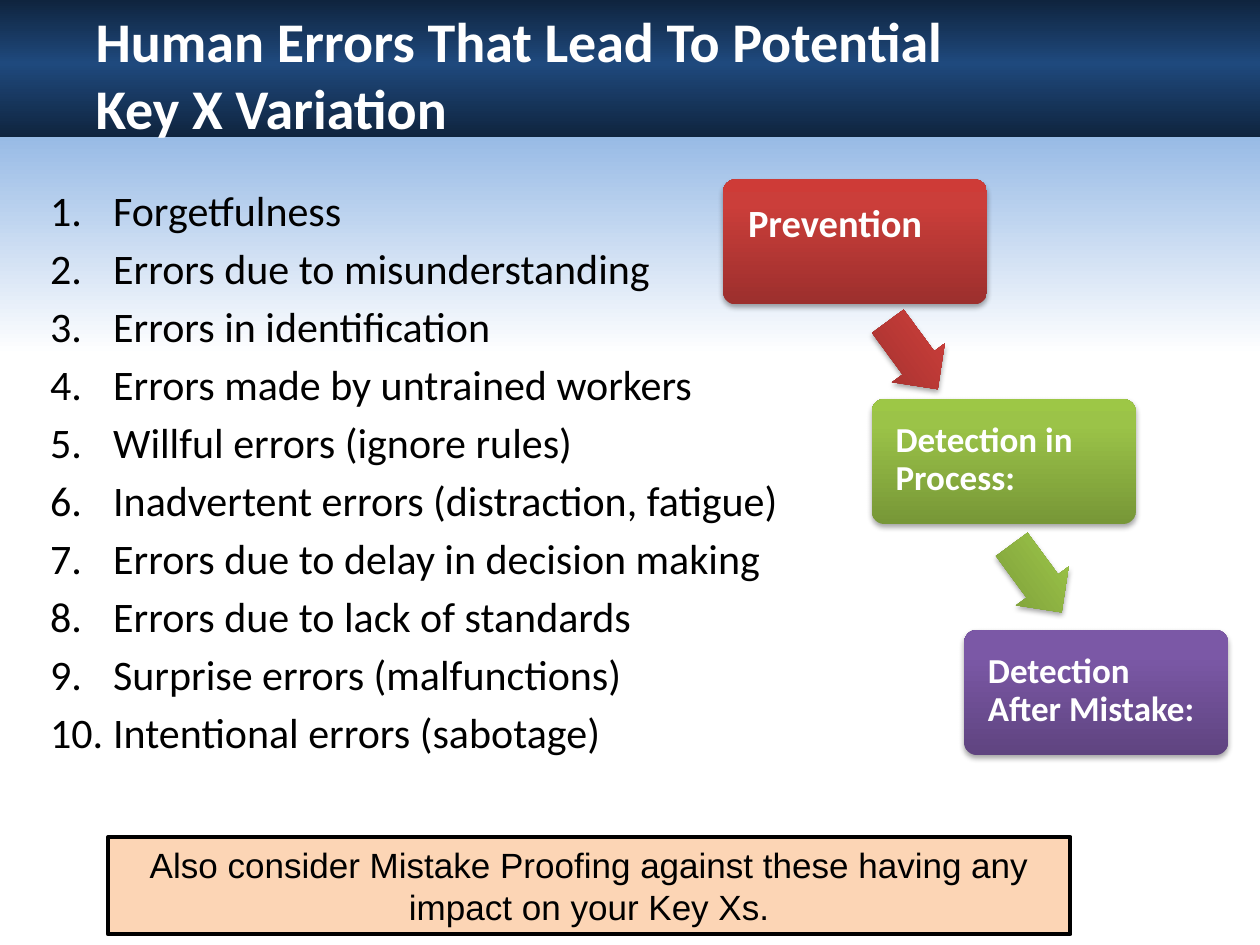
import lxml.etree
import pptx
import pptx.dml.color
import pptx.enum.shapes
import pptx.enum.text
import pptx.oxml
import pptx.oxml.ns
import pptx.util

Pt = pptx.util.Pt
Color = pptx.dml.color.RGBColor.from_string
qn = pptx.oxml.ns.qn
MSO_SHAPE = pptx.enum.shapes.MSO_SHAPE
NAMESPACE = 'xmlns:a="http://schemas.openxmlformats.org/drawingml/2006/main"'


def add_gradient_shape(kind, left, top, width, height, stops, angle, shadow=False):
    shape = slide.shapes.add_shape(kind, Pt(left), Pt(top), Pt(width), Pt(height))
    shape.line.fill.background()
    shape.shadow.inherit = False
    shape.fill.gradient()
    gradient = shape._element.spPr.find(qn("a:gradFill"))
    stop_xml = "".join(
        f'<a:gs pos="{position * 1000}"><a:srgbClr val="{color}"/></a:gs>' for position, color in stops
    )
    gradient.getparent().replace(gradient, pptx.oxml.parse_xml(
        f'<a:gradFill {NAMESPACE} rotWithShape="1"><a:gsLst>{stop_xml}</a:gsLst>'
        f'<a:lin ang="{angle * 60000}" scaled="0"/></a:gradFill>'
    ))
    if shadow:
        shape._element.spPr.find(qn("a:effectLst")).append(pptx.oxml.parse_xml(
            f'<a:outerShdw {NAMESPACE} blurRad="{Pt(3.1)}" dist="{Pt(1.8)}" dir="5400000" rotWithShape="0">'
            '<a:srgbClr val="000000"><a:alpha val="35000"/></a:srgbClr></a:outerShdw>'
        ))
    return shape


def set_font(paragraph, name, size, color, bold=False):
    paragraph.font.name = name
    paragraph.font.size = Pt(size)
    paragraph.font.bold = bold
    paragraph.font.color.rgb = Color(color)


presentation = pptx.Presentation()
presentation.slide_width = Pt(720)
presentation.slide_height = Pt(540)
slide = presentation.slides.add_slide(presentation.slide_layouts[6])

add_gradient_shape(MSO_SHAPE.RECTANGLE, 0, 66.2, 720, 471,
                   [(0, "8EB4E3"), (29, "FFFFFF"), (100, "FFFFFF")], 90)
add_gradient_shape(MSO_SHAPE.RECTANGLE, 0, 0, 720, 78.5,
                   [(0, "0F243E"), (46, "1F497D"), (100, "0F243E")], 90)

title = slide.shapes.add_textbox(Pt(47.5), Pt(0), Pt(616), Pt(85))
title.text_frame.word_wrap = True
title.text_frame.text = "Human Errors That Lead To Potential\vKey X Variation"
set_font(title.text_frame.paragraphs[0], "Calibri", 32, "FFFFFF", True)

errors = [
    "Forgetfulness",
    "Errors due to misunderstanding",
    "Errors in identification",
    "Errors made by untrained workers",
    "Willful errors (ignore rules)",
    "Inadvertent errors (distraction, fatigue)",
    "Errors due to delay in decision making",
    "Errors due to lack of standards",
    "Surprise errors (malfunctions)",
    "Intentional errors (sabotage)",
]
error_list = slide.shapes.add_textbox(Pt(21.6), Pt(102), Pt(642), Pt(348))
error_list.text_frame.word_wrap = True
error_list.text_frame.text = "\n".join(errors)
for paragraph in error_list.text_frame.paragraphs:
    set_font(paragraph, "Calibri", 24, "000000")
    paragraph.space_before = Pt(4.3)
    properties = paragraph._p.get_or_add_pPr()
    properties.set("marL", str(Pt(36)))
    properties.set("indent", str(-Pt(36)))
    numbering = lxml.etree.SubElement(properties, qn("a:buAutoNum"))
    numbering.set("type", "arabicPeriod")

advice = slide.shapes.add_shape(MSO_SHAPE.RECTANGLE, Pt(61.7), Pt(478.3), Pt(550), Pt(55.6))
advice.shadow.inherit = False
advice.fill.solid()
advice.fill.fore_color.rgb = Color("FCD5B5")
advice.line.color.rgb = Color("000000")
advice.line.width = Pt(2.25)
frame = advice.text_frame
frame.word_wrap = True
frame.margin_left = frame.margin_right = frame.margin_top = frame.margin_bottom = Pt(3.6)
frame.text = "Also consider Mistake Proofing against these having any impact on your Key Xs."
frame.paragraphs[0].alignment = pptx.enum.text.PP_ALIGN.CENTER
set_font(frame.paragraphs[0], "Arial", 20, "000000")

red = [(0, "9C2F2D"), (80, "CB3E3A"), (100, "CE3B37")]
green = [(0, "779737"), (80, "9BC348"), (100, "9DC746")]
purple = [(0, "5F4480"), (80, "7B58A6"), (100, "7C57A8")]
steps = [
    ("Prevention", 413.2, 102.5, 22, 12.2, red),
    ("Detection in Process:", 498.2, 228, 20, 11.5, green),
    ("Detection After Mistake:", 551, 360, 20, 11.5, purple),
]
for text, left, top, size, margin, stops in steps:
    box = add_gradient_shape(MSO_SHAPE.ROUNDED_RECTANGLE, left, top, 150.8, 71.5, stops, 270, True)
    box.adjustments[0] = 0.1
    frame = box.text_frame
    frame.word_wrap = True
    frame.vertical_anchor = pptx.enum.text.MSO_ANCHOR.TOP
    frame.margin_left = frame.margin_right = frame.margin_top = Pt(margin)
    frame.margin_bottom = Pt(margin + 18)
    frame.text = text
    paragraph = frame.paragraphs[0]
    paragraph.alignment = pptx.enum.text.PP_ALIGN.LEFT
    paragraph.line_spacing = 0.9
    set_font(paragraph, "Calibri", size, "FFFFFF", True)

for left, top, stops in [(497.5, 184.3, red), (568.3, 311.8, green)]:
    arrow = add_gradient_shape(MSO_SHAPE.RIGHT_ARROW, left, top, 48.2, 37.4, stops, 270, True)
    arrow.rotation = 53.7
    arrow.adjustments[0] = 0.6
    arrow.adjustments[1] = 0.5

presentation.save("out.pptx")
